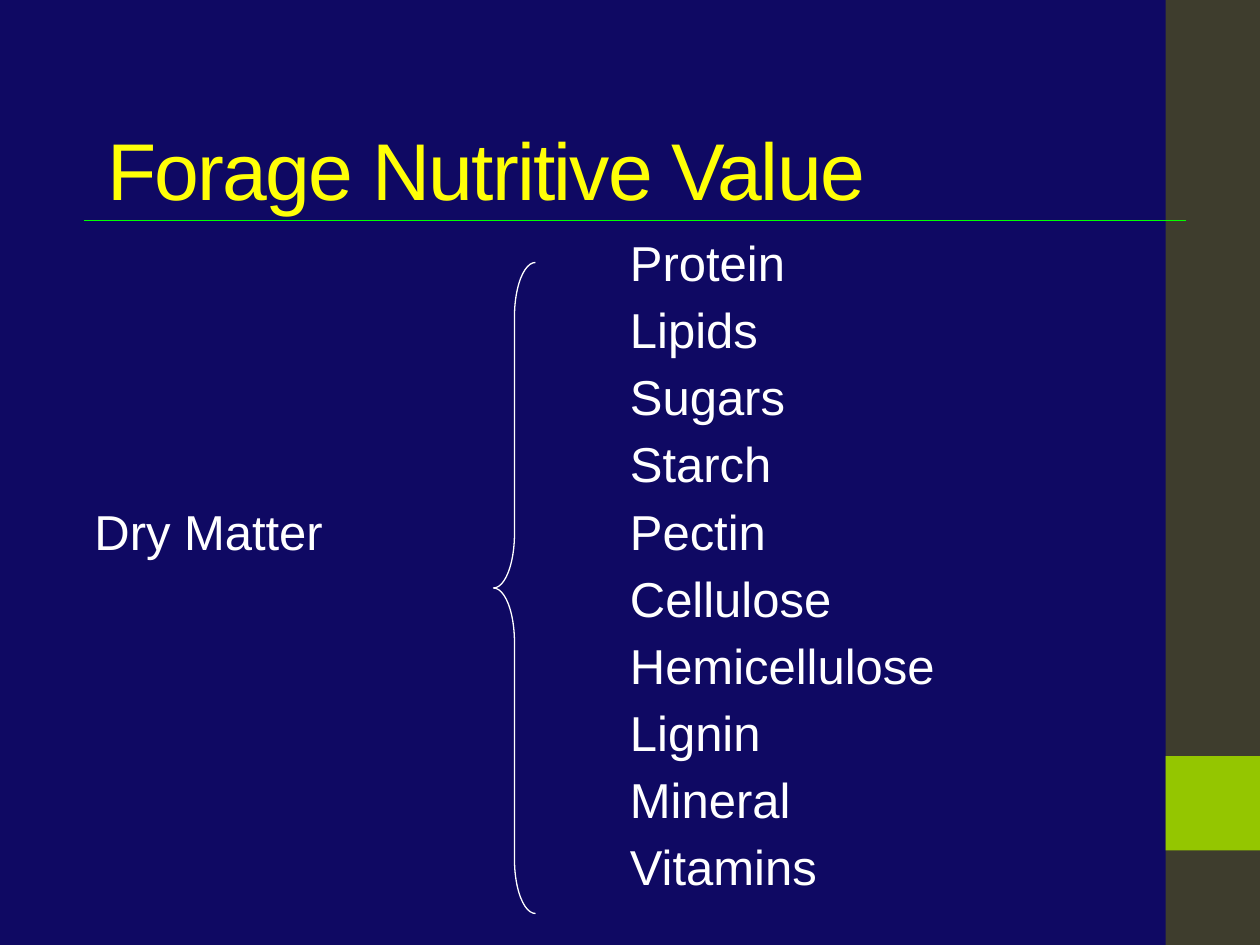
import dataclasses

import pptx
import pptx.dml.color
import pptx.enum.shapes
import pptx.enum.text
import pptx.oxml.ns
import pptx.util
from lxml import etree

Pt = pptx.util.Pt
qn = pptx.oxml.ns.qn
SHAPES = pptx.enum.shapes.MSO_SHAPE
ANCHOR = pptx.enum.text.MSO_ANCHOR
NO_GRID_STYLE = "{2D5ABB26-0587-4C30-8999-92F81FD0307C}"


@dataclasses.dataclass(frozen=True)
class Theme:
    background: str = "0F0963"
    sidebar: str = "3E3D2D"
    accent: str = "94C600"
    title: str = "FFFF07"
    rule: str = "00FF00"
    text: str = "FFFFFF"
    font: str = "Arial"
    title_size: float = 46
    text_size: float = 28
    line_width: float = 0.75


@dataclasses.dataclass(frozen=True)
class Box:
    left: float
    top: float
    width: float
    height: float

    def lengths(self):
        return Pt(self.left), Pt(self.top), Pt(self.width), Pt(self.height)


THEME = Theme()
COMPONENTS = ["Protein", "Lipids", "Sugars", "Starch", "Pectin", "Cellulose",
              "Hemicellulose", "Lignin", "Mineral", "Vitamins"]
WHOLE, WHOLE_ROW = "Dry Matter", 4


def color(code):
    return pptx.dml.color.RGBColor.from_string(code)


def style_span(span, size, code):
    span.font.name = THEME.font
    span.font.size = Pt(size)
    span.font.color.rgb = color(code)


def add_panel(page, box, code):
    panel = page.shapes.add_shape(SHAPES.RECTANGLE, *box.lengths())
    panel.shadow.inherit = False
    panel.fill.solid()
    panel.fill.fore_color.rgb = color(code)
    panel.line.fill.background()


def add_sidebar(page, box):
    add_panel(page, box, THEME.sidebar)
    # Square accent, one side length above the bottom edge
    side = box.width
    accent_top = box.top + box.height - 1.5 * side - 0.5 * side
    add_panel(page, Box(box.left, accent_top, side, side), THEME.accent)


def add_heading(page, box, text):
    title = page.shapes.title
    title.left, title.top, title.width, title.height = box.lengths()
    frame = title.text_frame
    frame.text = text
    frame.vertical_anchor = ANCHOR.MIDDLE
    frame.margin_top = Pt(10)
    para = frame.paragraphs[0]
    para.alignment = pptx.enum.text.PP_ALIGN.LEFT
    span = para.runs[0]
    style_span(span, THEME.title_size, THEME.title)
    span._r.get_or_add_rPr().set("spc", "-100")

    # Rule under the heading, reaching into the sidebar
    left, rule_y = box.left - 6, box.top + 78
    rule = page.shapes.add_connector(
        pptx.enum.shapes.MSO_CONNECTOR.STRAIGHT,
        Pt(left), Pt(rule_y), Pt(left + 630), Pt(rule_y))
    rule.line.color.rgb = color(THEME.rule)
    rule.line.width = Pt(THEME.line_width)
    etree.SubElement(rule._element.spPr, qn("a:effectLst"))


def add_components_table(page, box):
    holder = page.shapes.add_table(len(COMPONENTS), 2, *box.lengths())
    table = holder.table
    table.first_row = table.horz_banding = False
    table._tbl.tblPr.find(qn("a:tableStyleId")).text = NO_GRID_STYLE
    for column in table.columns:
        column.width = Pt(box.width / 2)
    for index, component in enumerate(COMPONENTS):
        table.rows[index].height = Pt(box.height / len(COMPONENTS))
        texts = (WHOLE if index == WHOLE_ROW else "", component)
        for cell, text in zip(table.rows[index].cells, texts):
            cell.fill.background()
            cell.margin_left = cell.margin_right = Pt(6)
            cell.margin_top = cell.margin_bottom = Pt(3)
            cell.vertical_anchor = ANCHOR.TOP
            cell.text_frame.text = text
            for span in cell.text_frame.paragraphs[0].runs:
                style_span(span, THEME.text_size, THEME.text)


def add_brace(page, box):
    brace = page.shapes.add_shape(SHAPES.LEFT_BRACE, *box.lengths())
    brace.shadow.inherit = False
    brace.adjustments[0] = 1.29
    brace.adjustments[1] = 0.5
    brace.fill.background()
    brace.line.color.rgb = color(THEME.text)
    brace.line.width = Pt(THEME.line_width)


def main():
    deck = pptx.Presentation()
    deck.slide_width, deck.slide_height = Pt(720), Pt(540)
    page = deck.slides.add_slide(deck.slide_layouts.get_by_name("Title Only"))
    page.background.fill.solid()
    page.background.fill.fore_color.rgb = color(THEME.background)

    add_sidebar(page, Box(666, 0, 54, 540))
    add_heading(page, Box(54, 48, 612, 90), "Forage Nutritive Value")
    add_components_table(page, Box(48, 132.5, 612, 384))
    add_brace(page, Box(282, 150, 24, 372))
    deck.save("out.pptx")


if __name__ == "__main__":
    main()
